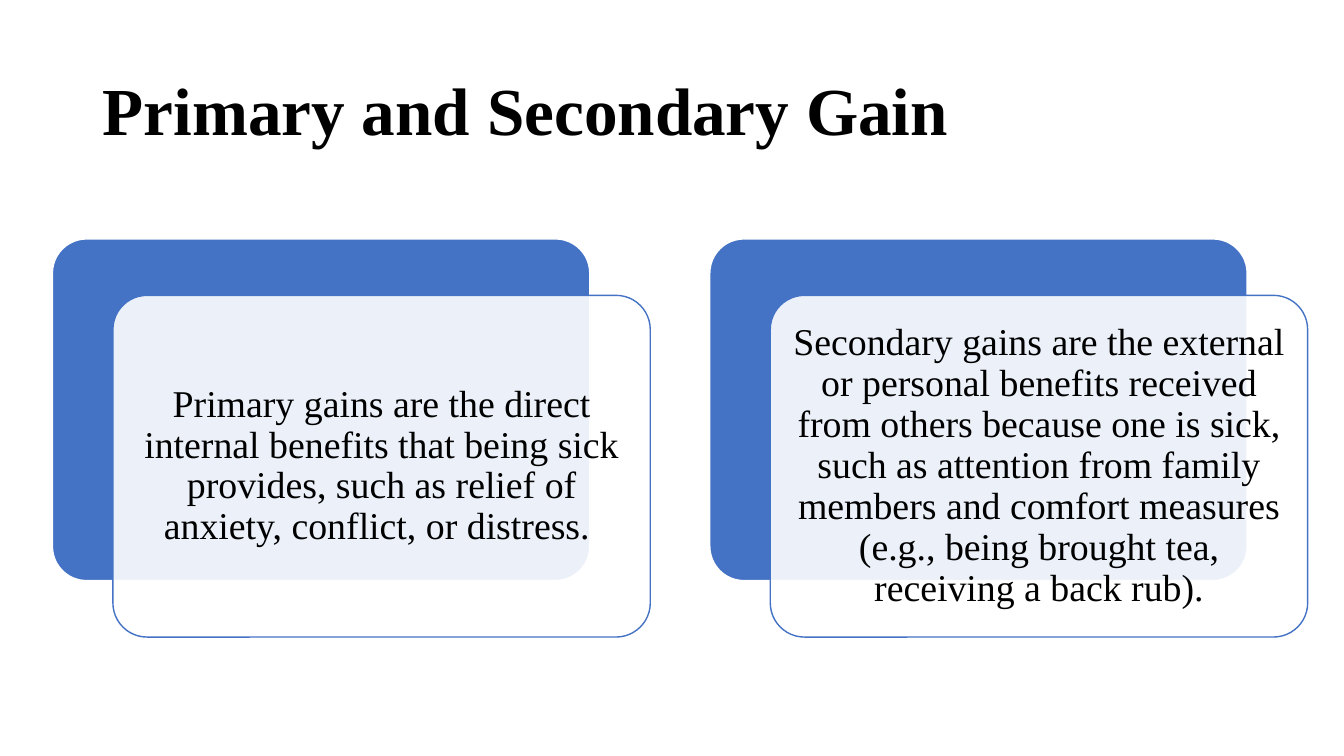
import pptx
import pptx.util
import pptx.dml.color
import pptx.enum.shapes
import pptx.enum.text
import pptx.oxml
import pptx.oxml.ns

SCALE = 9144
BLUE = "4472C4"
WHITE = "FFFFFF"
WIDTH, HEIGHT = 533, 339
LEFT, TOP, STEP = 52, 237, 652
SHIFT = (60, 56)
INSET = 10
GAINS = [
    "Primary gains are the direct internal benefits that being sick provides, "
    "such as relief of anxiety, conflict, or distress. ",
    "Secondary gains are the external or personal benefits received from others "
    "because one is sick, such as attention from family members and comfort "
    "measures (e.g., being brought tea, receiving a back rub).",
]


def px(size):
    return pptx.util.Emu(size * SCALE)


def color(code):
    return pptx.dml.color.RGBColor.from_string(code)


def write(frame, text, size, bold=False, align="LEFT", inset=None):
    frame.word_wrap = True
    frame.auto_size = pptx.enum.text.MSO_AUTO_SIZE.NONE
    frame.vertical_anchor = pptx.enum.text.MSO_ANCHOR.MIDDLE
    if inset is not None:
        frame.margin_left = frame.margin_right = px(inset)
        frame.margin_top = frame.margin_bottom = px(inset)
    para = frame.paragraphs[0]
    para.alignment = getattr(pptx.enum.text.PP_ALIGN, align)
    para.line_spacing = 0.9
    run = para.add_run()
    run.text = text
    run.font.name = "Times New Roman"
    run.font.size = pptx.util.Pt(size)
    run.font.bold = bold
    run.font.color.rgb = color("000000")


def panel(slide, left, top, fill, line, alpha=100):
    kind = pptx.enum.shapes.MSO_SHAPE.ROUNDED_RECTANGLE
    shape = slide.shapes.add_shape(kind, px(left), px(top), px(WIDTH), px(HEIGHT))
    shape.adjustments[0] = 0.1
    shape.shadow.inherit = False
    shape.fill.solid()
    shape.fill.fore_color.rgb = color(fill)
    shape.line.color.rgb = color(line)
    shape.line.width = pptx.util.Pt(1)
    if alpha < 100:
        tone = shape.fill._xPr.find(".//" + pptx.oxml.ns.qn("a:srgbClr"))
        node = pptx.oxml.parse_xml(
            f'<a:alpha {pptx.oxml.ns.nsdecls("a")} val="{alpha * 1000}"/>')
        tone.append(node)


def card(slide, left, text):
    panel(slide, left, TOP, BLUE, WHITE)
    front, top = left + SHIFT[0], TOP + SHIFT[1]
    panel(slide, front, top, WHITE, BLUE, alpha=90)
    box = slide.shapes.add_textbox(
        px(front + INSET), px(top + INSET),
        px(WIDTH - 2 * INSET), px(HEIGHT - 2 * INSET))
    write(box.text_frame, text, 27, align="CENTER", inset=11)


def main():
    deck = pptx.Presentation()
    deck.slide_width, deck.slide_height = px(1333), px(750)
    slide = deck.slides.add_slide(deck.slide_layouts[5])
    title = slide.shapes.title
    title.left, title.top = px(92), px(40)
    title.width, title.height = px(1150), px(145)
    write(title.text_frame, "Primary and Secondary Gain", 48, bold=True)
    for index, text in enumerate(GAINS):
        card(slide, LEFT + index * STEP, text)
    deck.save("out.pptx")


if __name__ == "__main__":
    main()
